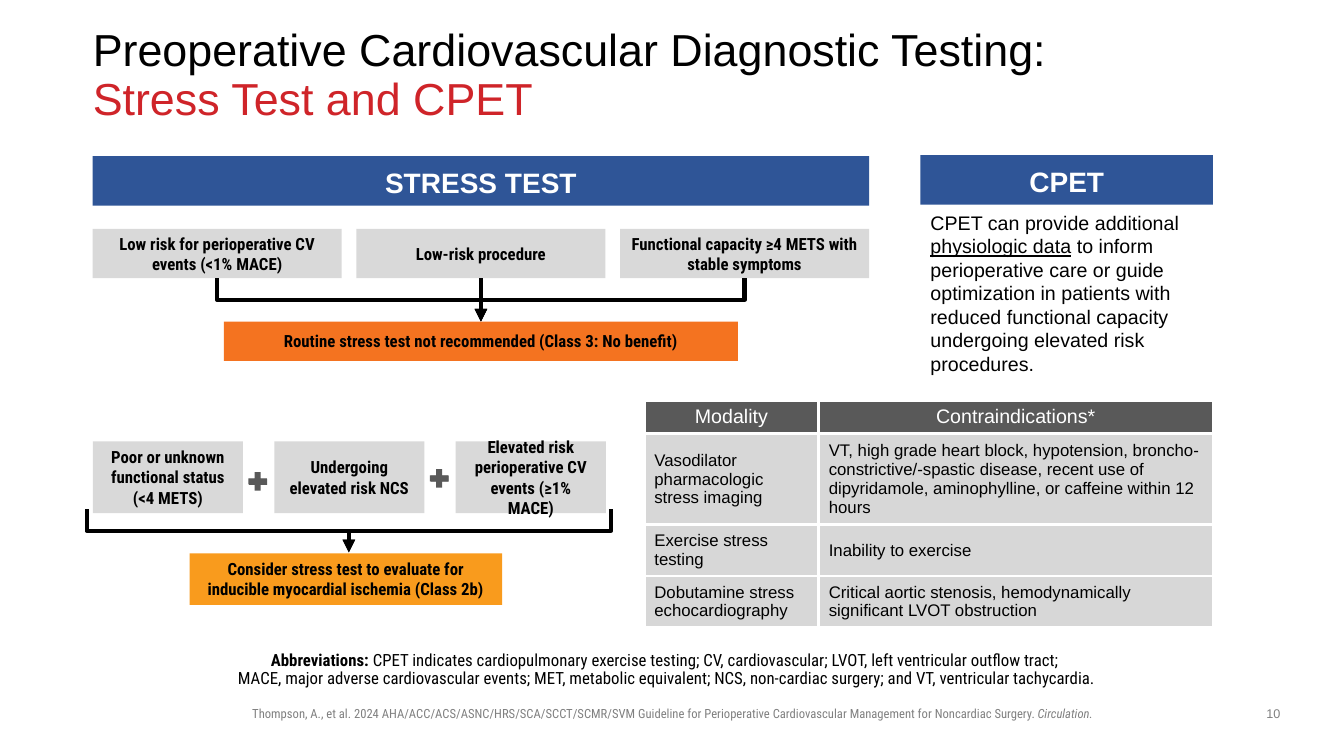
from pptx import Presentation, util as u
from pptx.dml.color import RGBColor
from pptx.enum import shapes, text
from pptx.oxml.ns import qn
from lxml import etree

PX = 9144
BLACK = RGBColor(0x00, 0x00, 0x00)
WHITE = RGBColor(0xFF, 0xFF, 0xFF)
RED = RGBColor(0xCF, 0x24, 0x29)
BLUE = RGBColor(0x2F, 0x55, 0x97)
PALE = RGBColor(0xD9, 0xD9, 0xD9)
CELL = RGBColor(0xD7, 0xD7, 0xD7)
DARK = RGBColor(0x59, 0x59, 0x59)
GREY = RGBColor(0x80, 0x80, 0x80)
ORANGE = RGBColor(0xF4, 0x73, 0x20)
AMBER = RGBColor(0xF9, 0x9B, 0x1D)
SANS, CONDENSED = "Arial", "Roboto Condensed"
LEFT, CENTER = text.PP_ALIGN.LEFT, text.PP_ALIGN.CENTER
MIDDLE = text.MSO_ANCHOR.MIDDLE
RECT = shapes.MSO_SHAPE.RECTANGLE


def px(*lengths):
    return [round(n * PX) for n in lengths]


def write(tf, runs, size, name=SANS, color=BLACK, align=LEFT, spacing=None, **frame):
    for key, value in {"word_wrap": True, **frame}.items():
        setattr(tf, key, value)
    p = tf.paragraphs[0]
    for key, value in {"alignment": align, "line_spacing": spacing, "space_before": u.Pt(0)}.items():
        setattr(p, key, value)
    for words, extra in runs:
        for i, line in enumerate(words.split("\n")):
            if i:
                p.add_line_break()
            r = p.add_run()
            r.text = line
            look = {"size": u.Pt(size), "name": name, "bold": False, **extra}
            r.font.color.rgb = look.pop("color", color)
            for key, value in look.items():
                setattr(r.font, key, value)


def margins(left, top, right, bottom):
    names = ("margin_left", "margin_top", "margin_right", "margin_bottom")
    return dict(zip(names, px(left, top, right, bottom)))


def place(sp, x, y, w, h):
    for key, value in zip(("left", "top", "width", "height"), px(x, y, w, h)):
        setattr(sp, key, value)


def block(parent, x, y, w, h, fill, kind=RECT):
    sp = parent.shapes.add_shape(kind, *px(x, y, w, h))
    sp.shadow.inherit = False
    sp.fill.solid()
    sp.fill.fore_color.rgb = fill
    sp.line.fill.background()
    return sp


def label(s, x, y, w, h, words, fill=PALE):
    sp = block(s, x, y, w, h, fill)
    write(sp.text_frame, [(words, {"bold": True})], 12, CONDENSED, align=CENTER, vertical_anchor=MIDDLE)


def banner(s, x, y, w, words):
    sp = block(s, x, y, w, 49, BLUE)
    write(sp.text_frame, [(words, {"bold": True})], 20, color=WHITE, align=CENTER,
          spacing=0.9, vertical_anchor=MIDDLE, **margins(0, 7, 0, 0))


def arrow(s, x1, y1, x2, y2):
    if x1 == x2:
        c = s.shapes.add_connector(shapes.MSO_CONNECTOR.STRAIGHT, *px(x1, y1, x2, y2))
    else:
        cx, cy = (x1 + x2) / 2, (y1 + y2) / 2
        side = 1 if x1 < x2 else -1
        half_w, half_h = side * (y2 - y1) / 2, abs(x2 - x1) / 2
        c = s.shapes.add_connector(shapes.MSO_CONNECTOR.ELBOW,
                                   *px(cx + half_w, cy - half_h, cx - half_w, cy + half_h))
        c._element.spPr.find(qn("a:xfrm")).set("rot", "16200000" if side > 0 else "5400000")
    c.line.color.rgb = BLACK
    c.line.width = u.Pt(3)
    etree.SubElement(c.line._get_or_add_ln(), qn("a:tailEnd"), type="triangle")
    etree.SubElement(c._element.spPr, qn("a:effectLst"))


def plus(s, x, y):
    group = s.shapes.add_group_shape()
    block(group, x, y, 25, 25, DARK, shapes.MSO_SHAPE.MATH_PLUS)
    block(group, x + 4, y + 10, 18, 6, DARK)


def title(s, x, y, w, h):
    sp = s.shapes.title
    place(sp, x, y, w, h)
    write(sp.text_frame, [("Preoperative Cardiovascular Diagnostic Testing: \n", {}),
                          ("Stress Test and CPET", {"color": RED})], 32, spacing=0.9,
          vertical_anchor=MIDDLE, auto_size=text.MSO_AUTO_SIZE.NONE, **margins(0, 0, 0, 0))


def not_recommended(s, x, y, w):
    banner(s, x, y, w, "STRESS TEST")
    criteria = ("Low risk for perioperative CV events (<1% MACE)", "Low-risk procedure",
                "Functional capacity ≥4 METS with stable symptoms")
    box_w = 247
    step = (w - box_w) / 2
    middle = x + w / 2
    for i, words in enumerate(criteria):
        label(s, x + i * step, y + 72, box_w, 49, words)
        arrow(s, x + i * step + box_w / 2, y + 121, middle, y + 164)
    label(s, middle - 255, y + 164, 510, 39,
          "Routine stress test not recommended (Class 3: No benefit)", ORANGE)


def consider(s, x, y, w):
    criteria = ("Poor or unknown functional status (<4 METS)", "Undergoing elevated risk NCS",
                "Elevated risk perioperative CV events (≥1% MACE)")
    box_w = 149
    step = (w - box_w) / 2
    for i, words in enumerate(criteria):
        label(s, x + i * step, y, box_w, 71, words)
    for i in range(2):
        plus(s, x + i * step + box_w + 2, y + 27 - 3 * i)
    for edge in (x - 6, x + w + 5):
        arrow(s, edge, y + 67, x + 254, y + 110)
    label(s, x + 96, y + 111, 310, 51,
          "Consider stress test to evaluate for inducible myocardial ischemia (Class 2b)", AMBER)


def cpet(s, x, y, w):
    banner(s, x, y, w, "CPET")
    sp = s.shapes.add_textbox(*px(x, y + 50, w + 38, 175))
    write(sp.text_frame, [("CPET can provide additional ", {}),
                          ("physiologic data", {"underline": True}),
                          (" to inform perioperative care or guide optimization in patients with "
                           "reduced functional capacity undergoing elevated risk procedures.", {})], 14)


def style_cell(cell, words, header):
    cell.fill.solid()
    cell.fill.fore_color.rgb = DARK if header else CELL
    if header:
        write(cell.text_frame, [(words, {})], 14, color=WHITE, align=CENTER)
    else:
        write(cell.text_frame, [(words, {})], 12)
        cell.vertical_anchor = MIDDLE
    tc_pr = cell._tc.get_or_add_tcPr()
    for i, side in enumerate(("lnL", "lnR", "lnT", "lnB")):
        ln = etree.Element(qn("a:" + side), w=str(u.Pt(2.25)))
        fill = etree.SubElement(ln, qn("a:solidFill"))
        etree.SubElement(fill, qn("a:srgbClr"), val=str(WHITE))
        tc_pr.insert(i, ln)


def contraindications(s, x, y):
    rows = (("Modality", "Contraindications*"),
            ("Vasodilator pharmacologic \nstress imaging",
             "VT, high grade heart block, hypotension, broncho-constrictive/-spastic disease, recent use "
             "of dipyridamole, aminophylline, or caffeine within 12 hours"),
            ("Exercise stress testing", "Inability to exercise"),
            ("Dobutamine stress echocardiography",
             "Critical aortic stenosis, hemodynamically significant LVOT obstruction"))
    widths, heights = px(173, 391), px(33, 89, 51, 51)
    table = s.shapes.add_table(4, 2, *px(x, y), sum(widths), sum(heights)).table
    for column, width in zip(table.columns, widths):
        column.width = width
    for i, (row, height) in enumerate(zip(table.rows, heights)):
        row.height = height
        for cell, words in zip(row.cells, rows[i]):
            style_cell(cell, words, i == 0)


def abbreviations(s, x, y, w, h):
    sp = s.placeholders[1]
    place(sp, x, y, w, h)
    p_pr = sp.text_frame.paragraphs[0]._p.get_or_add_pPr()
    p_pr.set("marL", "0")
    p_pr.set("indent", "0")
    etree.SubElement(p_pr, qn("a:buNone"))
    write(sp.text_frame, [("Abbreviations: ", {"bold": True}),
                          ("CPET indicates cardiopulmonary exercise testing; CV, cardiovascular; LVOT, left "
                           "ventricular outflow tract; \nMACE, major adverse cardiovascular events; MET, "
                           "metabolic equivalent; NCS, non-cardiac surgery; and VT, ventricular tachycardia.", {})],
          12, CONDENSED, align=CENTER, spacing=0.9, vertical_anchor=text.MSO_ANCHOR.BOTTOM,
          auto_size=text.MSO_AUTO_SIZE.NONE, **margins(0, 5, 10, 5))


def footer(s, y):
    sp = s.shapes.add_textbox(*px(236, y, 862, 25))
    write(sp.text_frame, [("Thompson, A., et al. 2024 AHA/ACC/ACS/ASNC/HRS/SCA/SCCT/SCMR/SVM Guideline for "
                           "Perioperative Cardiovascular Management for Noncardiac Surgery. ", {}),
                          ("Circulation.", {"italic": True})], 9, CONDENSED, GREY, CENTER)
    sp = s.shapes.add_textbox(*px(1242, y, 42, 26))
    write(sp.text_frame, [("10", {})], 9, color=GREY, align=CENTER)


def main():
    prs = Presentation()
    prs.slide_width, prs.slide_height = px(1333, 750)
    s = prs.slides.add_slide(prs.slide_layouts[1])
    title(s, 92, 40, 1150, 72)
    not_recommended(s, 92, 155, 770)
    cpet(s, 913, 154, 290)
    contraindications(s, 639, 397)
    consider(s, 92, 438, 509)
    abbreviations(s, 188, 642, 957, 46)
    footer(s, 695)
    prs.save("out.pptx")


if __name__ == "__main__":
    main()
